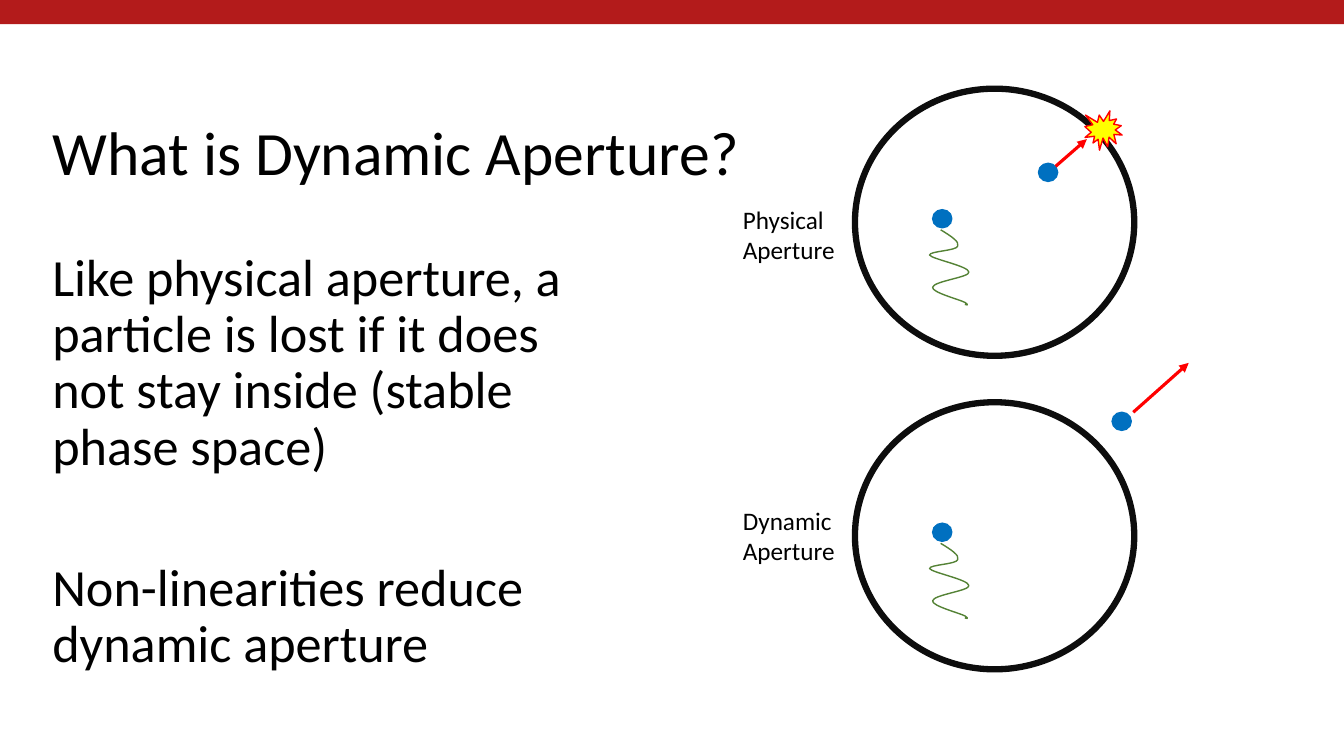
from lxml import etree
from pptx import Presentation
from pptx.dml.color import RGBColor
from pptx.enum import shapes, text
from pptx.oxml import ns
from pptx.util import Inches, Pt

FONT = "Calibri"
BLACK = RGBColor(0x00, 0x00, 0x00)
WHITE = RGBColor(0xFF, 0xFF, 0xFF)
BANNER = RGBColor(0xB3, 0x1B, 0x1B)
RING = RGBColor(0x0D, 0x0D, 0x0D)
BLUE = RGBColor(0x00, 0x70, 0xC0)
RED = RGBColor(0xFF, 0x00, 0x00)
YELLOW = RGBColor(0xFF, 0xFF, 0x00)
GREEN = RGBColor(0x54, 0x82, 0x35)

PANEL_STEP = 3.11  # from the upper ring to the lower one

# Start, then three cubic Bezier points a row, in the upper ring
TRACK = [
    (9.33, 2.28),
    (9.43, 2.34), (9.52, 2.40), (9.50, 2.44),
    (9.49, 2.49), (9.22, 2.49), (9.22, 2.53),
    (9.24, 2.57), (9.61, 2.64), (9.61, 2.70),
    (9.62, 2.75), (9.26, 2.79), (9.25, 2.85),
    (9.24, 2.90), (9.51, 2.97), (9.57, 3.00),
    (9.62, 3.03), (9.58, 3.03), (9.57, 3.02),
]


def add_paragraph(tf, words, size, spacing=None, before=None):
    p = tf.paragraphs[0] if not tf.text else tf.add_paragraph()
    p.alignment = text.PP_ALIGN.LEFT
    if spacing:
        p.line_spacing = spacing
    if before:
        p.space_before = Pt(before)
    r = p.add_run()
    r.text = words
    r.font.name = FONT
    r.font.size = Pt(size)
    r.font.color.rgb = BLACK


def add_text_box(slide, x, y, w, h):
    tf = slide.shapes.add_textbox(Inches(x), Inches(y), Inches(w), Inches(h)).text_frame
    tf.word_wrap = True
    return tf


def add_solid(slide, kind, x, y, w, h, fill, line=None, width=1):
    sp = slide.shapes.add_shape(kind, Inches(x), Inches(y), Inches(w), Inches(h))
    sp.shadow.inherit = False
    sp.fill.solid()
    sp.fill.fore_color.rgb = fill
    if line is None:
        sp.line.fill.background()
    else:
        sp.line.color.rgb = line
        sp.line.width = Pt(width)


def add_ring(slide, y):
    add_solid(slide, shapes.MSO_SHAPE.OVAL, 8.48, y, 2.77, 2.65, WHITE, RING, 4.5)


def add_particle(slide, x, y):
    add_solid(slide, shapes.MSO_SHAPE.OVAL, x, y, 0.19, 0.18, BLUE, BLUE)


def add_arrow(slide, x1, y1, x2, y2):
    line = slide.shapes.add_connector(
        shapes.MSO_CONNECTOR.STRAIGHT, Inches(x1), Inches(y1), Inches(x2), Inches(y2))
    line.line.color.rgb = RED
    line.line.width = Pt(2.25)
    etree.SubElement(line.line._get_or_add_ln(), ns.qn("a:tailEnd"), type="triangle")
    etree.SubElement(line._element.spPr, ns.qn("a:effectLst"))


def curve_segments(sp):
    """Turn each three straight segments into one cubic curve."""
    lines = list(sp._element.iter(ns.qn("a:lnTo")))
    for i in range(0, len(lines), 3):
        curve = etree.Element(ns.qn("a:cubicBezTo"))
        lines[i].addprevious(curve)
        for line in lines[i:i + 3]:
            curve.append(line[0])
            line.getparent().remove(line)


def add_track(slide, dy):
    start, *points = [(Inches(x), Inches(y + dy)) for x, y in TRACK]
    builder = slide.shapes.build_freeform(*start)
    builder.add_line_segments(points, close=False)
    sp = builder.convert_to_shape()
    curve_segments(sp)
    sp.shadow.inherit = False
    sp.fill.background()
    sp.line.color.rgb = GREEN
    sp.line.width = Pt(1)


def add_stable_panel(slide, dy):
    add_ring(slide, 0.88 + dy)
    add_particle(slide, 9.25, 2.08 + dy)
    add_track(slide, dy)


def add_title(slide, words):
    title = slide.shapes.title
    title.left, title.top = Inches(0.42), Inches(1.17)
    title.width, title.height = Inches(12.65), Inches(0.75)
    tf = title.text_frame
    tf.auto_size = text.MSO_AUTO_SIZE.NONE
    tf.vertical_anchor = text.MSO_ANCHOR.MIDDLE
    add_paragraph(tf, words, 44, 0.9)


def main():
    prs = Presentation()
    prs.slide_width, prs.slide_height = Inches(13.33), Inches(7.5)
    s = prs.slides.add_slide(prs.slide_layouts[5])

    # Banner, title and body
    add_solid(s, shapes.MSO_SHAPE.RECTANGLE, 0, 0, 13.33, 0.24, BANNER)
    add_title(s, "What is Dynamic Aperture?")
    body = add_text_box(s, 0.42, 2.44, 5.42, 5.06)
    add_paragraph(body, "Like physical aperture, a particle is lost if it does "
                  "not stay inside (stable phase space)", 37.3, 0.9)
    add_paragraph(body, "Non-linearities reduce dynamic aperture", 37.3, 0.9, before=60.5)

    # Physical aperture: the lost particle hits the wall
    add_stable_panel(s, 0)
    add_particle(s, 10.3, 1.62)
    add_arrow(s, 10.47, 1.65, 10.78, 1.38)
    add_solid(s, shapes.MSO_SHAPE.EXPLOSION1, 10.76, 1.1, 0.37, 0.39, YELLOW, RED)

    # Dynamic aperture: the lost particle drifts away
    add_stable_panel(s, PANEL_STEP)
    add_particle(s, 11.03, 4.09)
    add_arrow(s, 11.24, 4.09, 11.79, 3.6)

    # Ring labels
    for words, y in (("Physical Aperture", 1.98), ("Dynamic Aperture", 4.96)):
        add_paragraph(add_text_box(s, 7.27, y, 1.2, 0.71), words, 18)

    prs.save("out.pptx")


if __name__ == "__main__":
    main()
